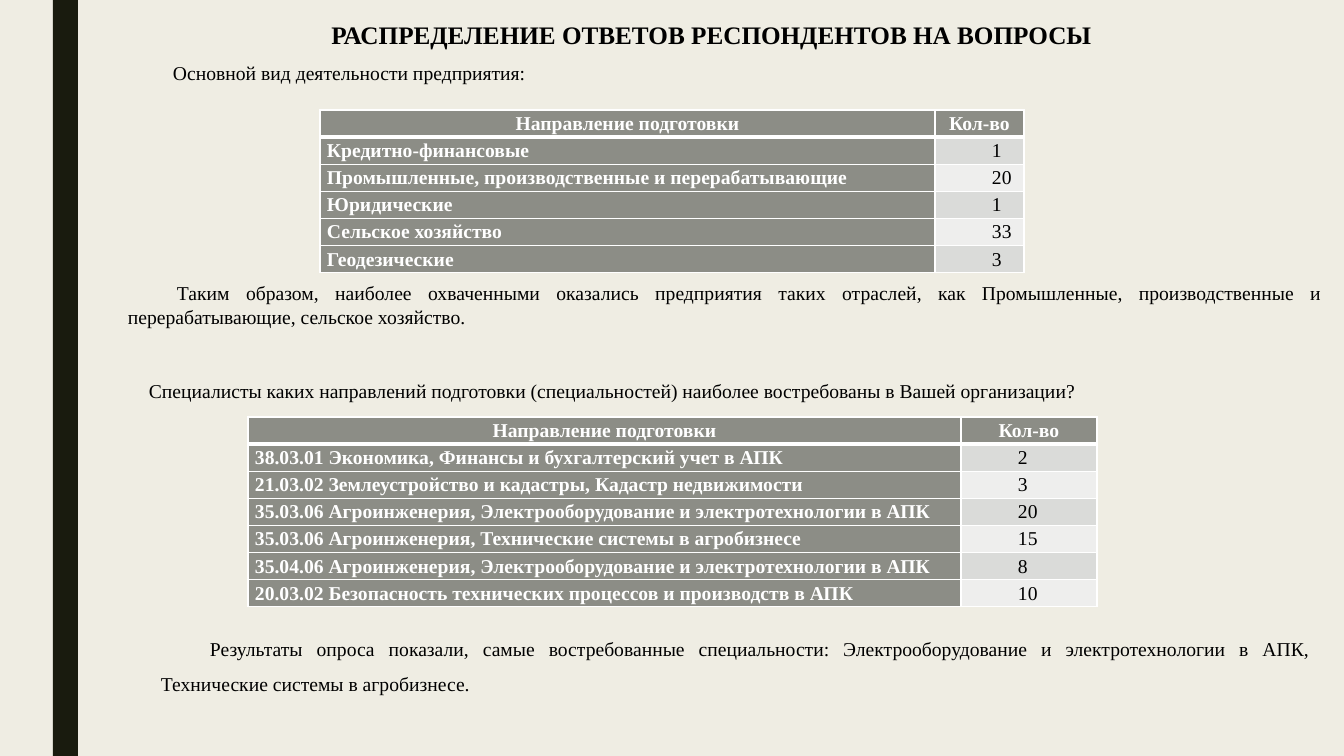
from lxml.etree import SubElement
from pptx import Presentation
from pptx.dml.color import RGBColor
from pptx.enum.shapes import MSO_SHAPE
from pptx.enum.text import MSO_ANCHOR, PP_ALIGN as ALIGN
from pptx.oxml.ns import qn
from pptx.util import Emu, Pt

PX = 914400 / 100.8
ROW_HEIGHT = 27
INDENT = 49


def px(length):
    return Emu(round(length * PX))


def style(paragraph, size, color, bold, align, spacing):
    paragraph.alignment = align
    paragraph.line_spacing = spacing
    for run in paragraph.runs:
        run.font.name = "Times New Roman"
        run.font.size = Pt(size)
        run.font.bold = bold
        run.font.color.rgb = RGBColor.from_string(color)


prs = Presentation()
prs.slide_width, prs.slide_height = px(1344), px(756)
slide = prs.slides.add_slide(prs.slide_layouts[6])
slide.background.fill.solid()
slide.background.fill.fore_color.rgb = RGBColor.from_string("EFEDE3")

stripe = slide.shapes.add_shape(MSO_SHAPE.RECTANGLE, px(53), 0, px(25), px(756))
stripe.shadow.inherit = False
stripe.fill.solid()
stripe.fill.fore_color.rgb = RGBColor.from_string("191B0E")
stripe.line.fill.background()

passages = [
    ("РАСПРЕДЕЛЕНИЕ ОТВЕТОВ РЕСПОНДЕНТОВ НА ВОПРОСЫ ",
     195, 14, 913, 40, 18, True, ALIGN.RIGHT, 1, 0, True, MSO_ANCHOR.TOP),
    ("Основной вид деятельности предприятия:",
     114, 56, 428, 34, 14, False, ALIGN.JUSTIFY, 1, INDENT, False, MSO_ANCHOR.MIDDLE),
    ("Таким образом, наиболее охваченными оказались предприятия таких отраслей, как "
     "Промышленные, производственные и перерабатывающие, сельское хозяйство.",
     118, 276, 1214, 58, 14, False, ALIGN.JUSTIFY, 1, INDENT, True, MSO_ANCHOR.TOP),
    ("Специалисты каких направлений подготовки (специальностей) наиболее "
     "востребованы в Вашей организации?",
     90, 362, 1230, 42, 14, False, ALIGN.JUSTIFY, 1.5, INDENT, True, MSO_ANCHOR.TOP),
    ("Результаты опроса показали, самые востребованные специальности: "
     "Электрооборудование и электротехнологии в АПК, Технические системы в агробизнесе.",
     151, 620, 1169, 82, 14, False, ALIGN.JUSTIFY, 1.5, INDENT, True, MSO_ANCHOR.TOP),
]
for text, left, top, width, height, size, bold, align, spacing, indent, wrap, anchor in passages:
    frame = slide.shapes.add_textbox(px(left), px(top), px(width), px(height)).text_frame
    frame.word_wrap = wrap
    frame.vertical_anchor = anchor
    frame.text = text
    passage = frame.paragraphs[0]
    style(passage, size, "000000", bold, align, spacing)
    passage.font.size = Pt(size)
    passage._p.get_or_add_pPr().set("indent", str(px(indent)))

header = ("Направление подготовки", "Кол-во")
specialties = [
    header,
    ("38.03.01 Экономика, Финансы и бухгалтерский учет в АПК", "2"),
    ("21.03.02 Землеустройство и кадастры, Кадастр недвижимости", "3"),
    ("35.03.06 Агроинженерия, Электрооборудование и электротехнологии в АПК", "20"),
    ("35.03.06 Агроинженерия, Технические системы в агробизнесе", "15"),
    ("35.04.06 Агроинженерия, Электрооборудование и электротехнологии в АПК", "8"),
    ("20.03.02 Безопасность технических процессов и производств в АПК", "10"),
]
industries = [
    header,
    ("Кредитно-финансовые", "1"),
    ("Промышленные, производственные и перерабатывающие", "20"),
    ("Юридические", "1"),
    ("Сельское хозяйство", "33"),
    ("Геодезические", "3"),
]

for answers, left, top, widths in (
    (specialties, 248, 417, (713, 136)),
    (industries, 320, 110, (615, 89)),
):
    table = slide.shapes.add_table(
        len(answers), 2, px(left), px(top), px(sum(widths)), px(ROW_HEIGHT * len(answers))
    ).table
    for column, width in zip(table.columns, widths):
        column.width = px(width)
    for row, answer in enumerate(answers):
        table.rows[row].height = px(ROW_HEIGHT)
        for col, text in enumerate(answer):
            cell = table.cell(row, col)
            cell.margin_left = cell.margin_right = px(7)
            cell.margin_top = cell.margin_bottom = 0
            cell.text = text
            entry = cell.text_frame.paragraphs[0]
            is_count = row > 0 and col == 1
            style(entry, 14, "000000" if is_count else "FFFFFF", not is_count,
                  ALIGN.LEFT if row else ALIGN.CENTER, 1.15)
            if is_count:
                entry._p.get_or_add_pPr().set("marL", str(px(50)))

            for side in "LRTB":
                thick = (row, side) in ((0, "B"), (1, "T"))
                border = SubElement(cell._tc.get_or_add_tcPr(), qn(f"a:ln{side}"),
                                    w=str(Pt(3 if thick else 1)))
                SubElement(SubElement(border, qn("a:solidFill")), qn("a:srgbClr"), val="FFFFFF")
            band = "DADBD9" if row % 2 else "EEEEED"
            cell.fill.solid()
            cell.fill.fore_color.rgb = RGBColor.from_string(band if is_count else "8C8D86")

prs.save("out.pptx")
